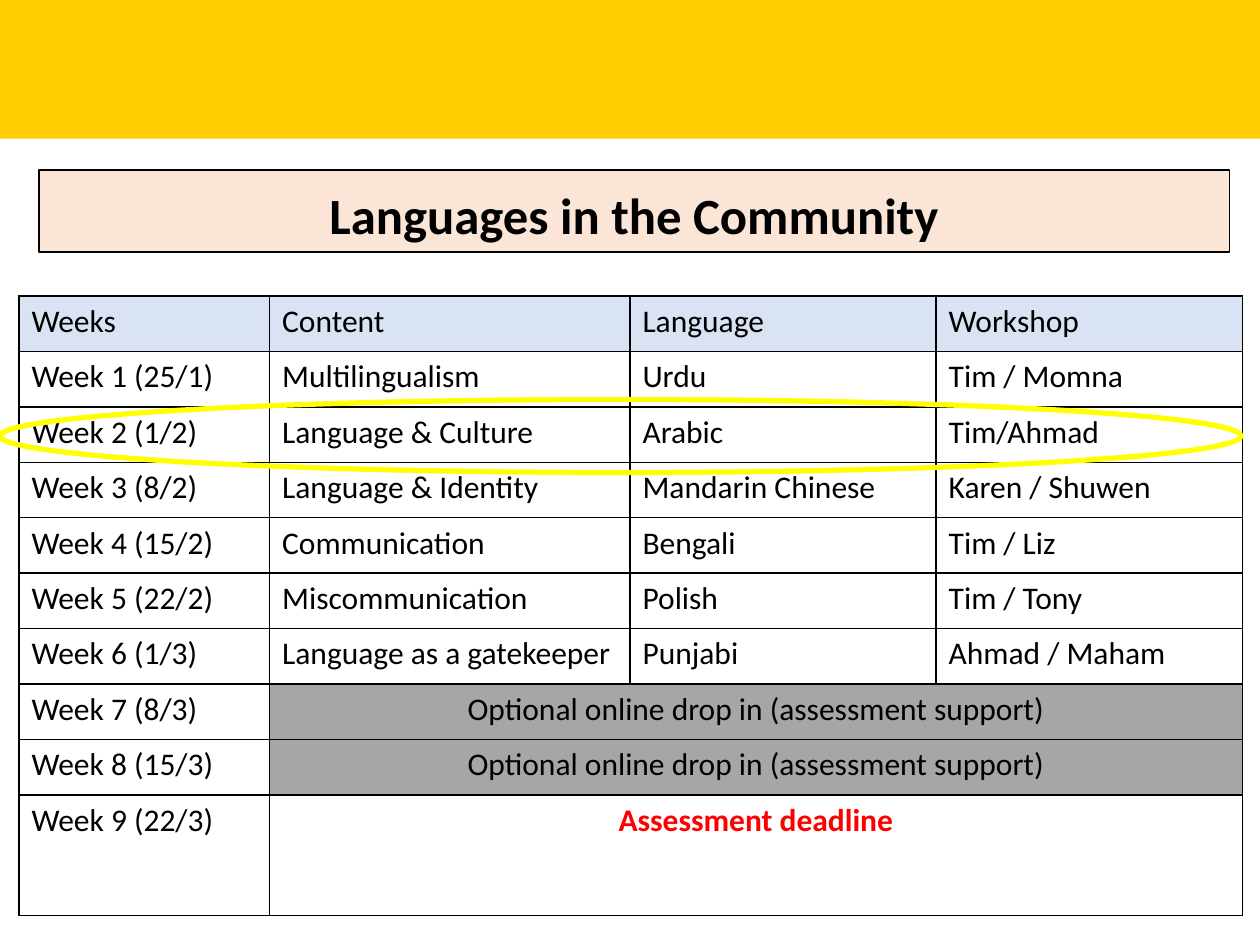
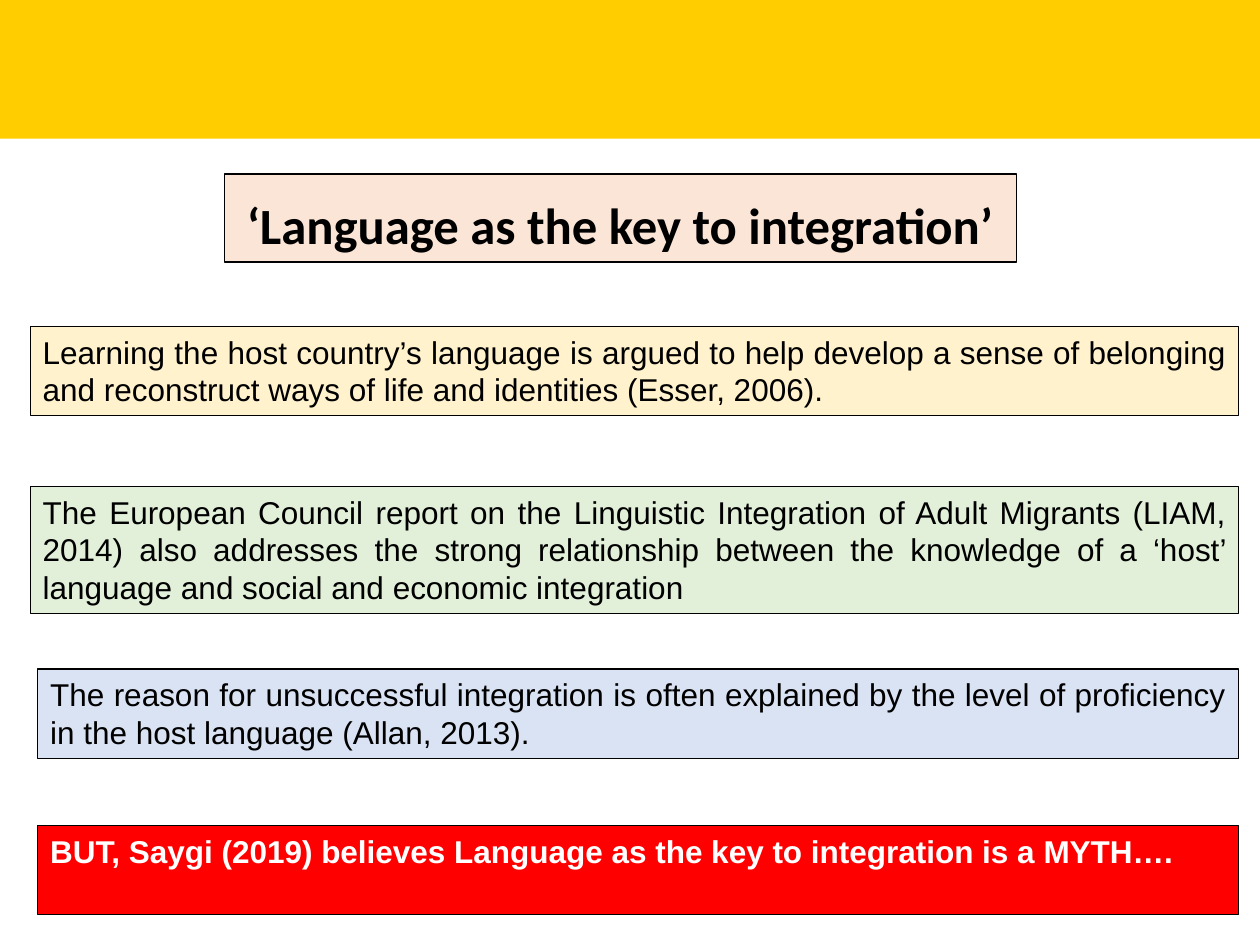
from lxml.etree import SubElement
from pptx import Presentation
from pptx.dml.color import RGBColor
from pptx.enum.shapes import MSO_SHAPE
from pptx.enum.text import MSO_ANCHOR, MSO_AUTO_SIZE, PP_ALIGN
from pptx.oxml.ns import qn
from pptx.util import Inches, Pt

WIDTH, HEIGHT = 10, 7.5
BLACK, WHITE, RED = "000000", "FFFFFF", "FF0000"
GOLD, PEACH, BLUE, GREY = "FFCD00", "FBE5D6", "DAE3F3", "A6A6A6"
CREAM, GREEN, YELLOW = "FFF2CC", "E2F0D9", "FFFF00"

COLUMNS = (1.99, 2.86, 2.43, 2.43)
ROW, LAST_ROW = 0.44, 0.96
DROP_IN = "Optional online drop in (assessment support)"
SCHEDULE = (
    ("Weeks", "Content", "Language", "Workshop"),
    ("Week 1 (25/1)", "Multilingualism", "Urdu", "Tim / Momna"),
    ("Week 2 (1/2)", "Language & Culture", "Arabic", "Tim/Ahmad"),
    ("Week 3 (8/2)", "Language & Identity", "Mandarin Chinese", "Karen / Shuwen"),
    ("Week 4 (15/2)", "Communication", "Bengali", "Tim / Liz"),
    ("Week 5 (22/2)", "Miscommunication", "Polish", "Tim / Tony"),
    ("Week 6 (1/3)", "Language as a gatekeeper", "Punjabi", "Ahmad / Maham"),
    ("Week 7 (8/3)", DROP_IN),
    ("Week 8 (15/3)", DROP_IN),
    ("Week 9 (22/3)", "Assessment deadline"),
)
# left, top, height, fill, text colour, text
ARGUMENTS = (
    (0.24, 2.59, 0.71, CREAM, BLACK,
     "Learning the host country’s language is argued to help develop a sense of "
     "belonging and reconstruct ways of life and identities (Esser, 2006)."),
    (0.24, 3.86, 1.01, GREEN, BLACK,
     "The European Council report on the Linguistic Integration of Adult Migrants "
     "(LIAM, 2014) also addresses the strong relationship between the knowledge of "
     "a ‘host’ language and social and economic integration"),
    (0.3, 5.31, 0.71, BLUE, BLACK,
     "The reason for unsuccessful integration is often explained by the level of "
     "proficiency in the host language (Allan, 2013)."),
    (0.3, 6.55, 0.71, RED, WHITE,
     "BUT, Saygi (2019) believes Language as the key to integration is a MYTH…."),
)
ARGUMENT_RIGHT = 9.83


def rgb(color):
    return RGBColor.from_string(color)


def paint(shape, fill=None, line=None, weight=0.75):
    if fill:
        shape.fill.solid()
        shape.fill.fore_color.rgb = rgb(fill)
    else:
        shape.fill.background()
    if line:
        shape.line.color.rgb = rgb(line)
        shape.line.width = Pt(weight)
    else:
        shape.line.fill.background()


def write(tf, text, size=18, font="Calibri", color=BLACK, bold=False, align=PP_ALIGN.LEFT):
    tf.text = text
    p = tf.paragraphs[0]
    p.alignment = align
    p.font.size, p.font.name, p.font.bold = Pt(size), font, bold
    p.font.color.rgb = rgb(color)
    return p


def add_box(s, kind, left, top, width, height, **look):
    sp = s.shapes.add_shape(kind, *map(Inches, (left, top, width, height)))
    sp.shadow.inherit = False
    paint(sp, **look)
    return sp


def add_master_band(prs, s):
    """Draw the gold band and move it behind everything on the master."""
    band = add_box(s, MSO_SHAPE.RECTANGLE, 0, 0, WIDTH, 1.1, fill=GOLD)
    prs.slide_master.shapes._spTree.insert(2, band._element)


def set_title(s, text, left, top, width, height):
    sp = s.shapes.title
    sp.left, sp.top, sp.width, sp.height = map(Inches, (left, top, width, height))
    paint(sp, PEACH, BLACK)
    tf = sp.text_frame
    tf.word_wrap, tf.auto_size = True, MSO_AUTO_SIZE.NONE
    tf.vertical_anchor = MSO_ANCHOR.BOTTOM
    write(tf, text, 29, bold=True, align=PP_ALIGN.CENTER).line_spacing = 0.9


def add_argument(s, left, top, height, fill, color, text):
    sp = add_box(s, MSO_SHAPE.RECTANGLE, left, top, ARGUMENT_RIGHT - left, height,
                 fill=fill, line=BLACK)
    tf = sp.text_frame
    tf.word_wrap, tf.vertical_anchor = True, MSO_ANCHOR.TOP
    write(tf, text, font="Arial", color=color, bold=color == WHITE, align=PP_ALIGN.JUSTIFY)


def style_cell(cell, fill=None):
    """Give the cell thin black borders, then its fill."""
    tcPr = cell._tc.get_or_add_tcPr()
    for side in "LRTB":
        ln = SubElement(tcPr, qn(f"a:ln{side}"), w=str(Pt(1)))
        SubElement(SubElement(ln, qn("a:solidFill")), qn("a:srgbClr"), val=BLACK)
    if fill:
        cell.fill.solid()
        cell.fill.fore_color.rgb = rgb(fill)
    else:
        cell.fill.background()


def add_schedule(s, left, top):
    rows, cols = len(SCHEDULE), len(COLUMNS)
    height = ROW * (rows - 1) + LAST_ROW
    table = s.shapes.add_table(
        rows, cols, *map(Inches, (left, top, sum(COLUMNS), height))).table
    table.first_row = table.horz_banding = False
    for column, width in zip(table.columns, COLUMNS):
        column.width = Inches(width)
    for i, texts in enumerate(SCHEDULE):
        table.rows[i].height = Inches(LAST_ROW if i == rows - 1 else ROW)
        spans = len(texts) < cols
        for j in range(cols):
            grey = spans and j > 0 and texts[1] == DROP_IN
            style_cell(table.cell(i, j), BLUE if i == 0 else GREY if grey else None)
        if spans:
            table.cell(i, 1).merge(table.cell(i, cols - 1))
        for j, text in enumerate(texts):
            deadline = spans and j == 1 and text != DROP_IN
            write(table.cell(i, j).text_frame, text,
                  color=RED if deadline else BLACK, bold=deadline,
                  align=PP_ALIGN.CENTER if spans and j else PP_ALIGN.LEFT)


def main():
    prs = Presentation()
    prs.slide_width, prs.slide_height = Inches(WIDTH), Inches(HEIGHT)
    title_only = prs.slide_layouts[5]

    s = prs.slides.add_slide(title_only)
    add_master_band(prs, s)
    set_title(s, "Languages in the Community", 0.31, 1.35, 9.45, 0.65)
    add_schedule(s, 0.15, 2.35)
    add_box(s, MSO_SHAPE.OVAL, 0, 3.17, 9.85, 0.58, line=YELLOW, weight=3)

    s = prs.slides.add_slide(title_only)
    set_title(s, "‘Language as the key to integration’", 1.78, 1.38, 6.29, 0.7)
    for argument in ARGUMENTS:
        add_argument(s, *argument)

    prs.save("out.pptx")


if __name__ == "__main__":
    main()
